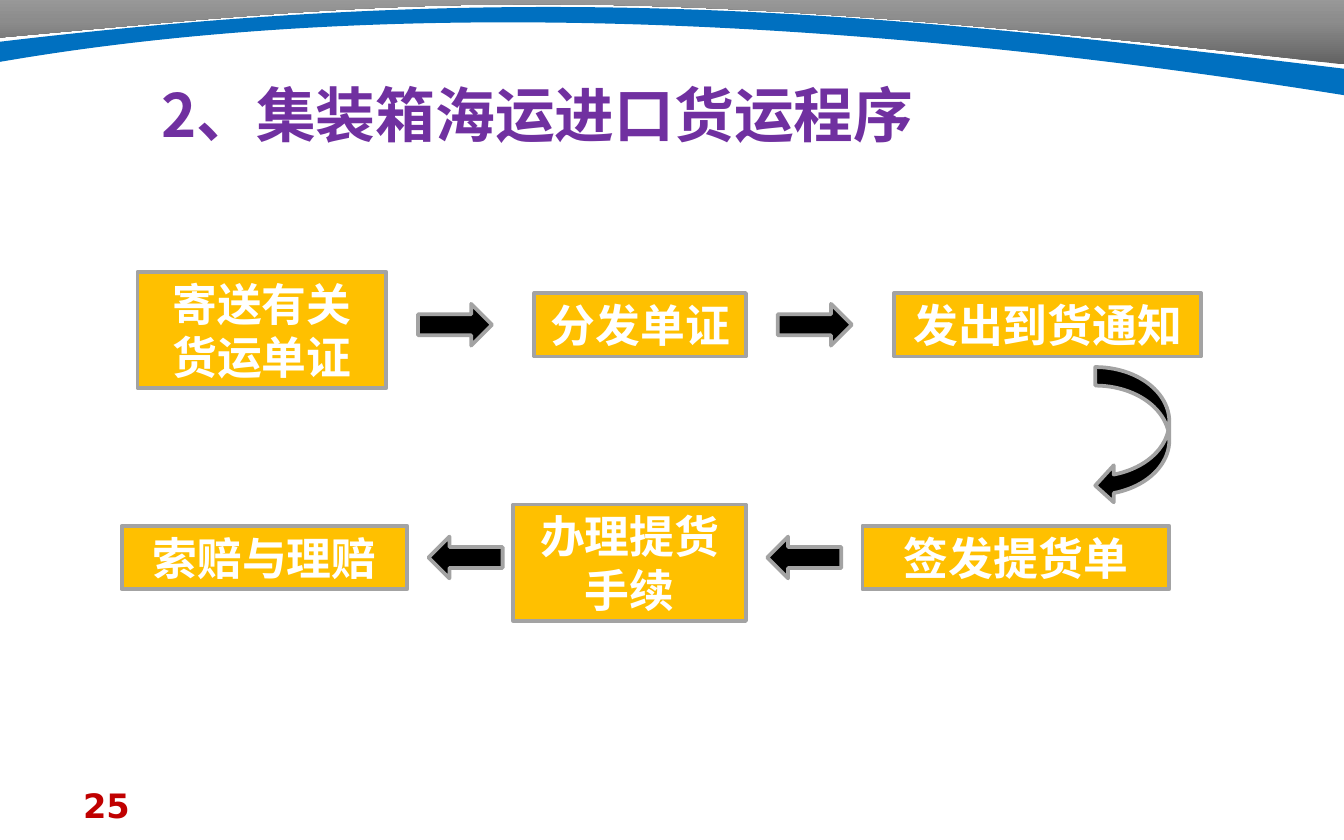
from copy import deepcopy

from pptx import Presentation
from pptx.dml.color import RGBColor
from pptx.enum.shapes import MSO_SHAPE
from pptx.enum.text import MSO_ANCHOR, PP_ALIGN
from pptx.oxml.ns import qn
from pptx.util import Cm, Pt

RECT = MSO_SHAPE.RECTANGLE
RIGHT = MSO_SHAPE.RIGHT_ARROW
LEFT = MSO_SHAPE.LEFT_ARROW
BEND = MSO_SHAPE.CURVED_LEFT_ARROW
MIDDLE = MSO_ANCHOR.MIDDLE
CENTER = PP_ALIGN.CENTER

HAN = "Noto Sans CJK SC"
LATIN = "DejaVu Sans"
COLORS = {
    "step": "FFC000", "edge": "A3A3A3", "arrow": "000000", "label": "FFFFFF",
    "title": "7030A0", "number": "C00000", "band": "0070C0",
    "dark": "626262", "mid": "8C8C8C", "light": "A6A6A6",
}
WIDTH, HEIGHT = 25.4, 15.88
ARROW_W, ARROW_H = 1.4, 0.79

# Middle of the row, arrow shape, steps (text, left, width, lines), arrow lefts
ROWS = [
    (6.14, RIGHT,
     [("寄送有关货运单证", 2.6, 4.7, 2), ("分发单证", 10.1, 4, 1),
      ("发出到货通知", 16.9, 5.8, 1)],
     [7.9, 14.7]),
    (10.54, LEFT,
     [("签发提货单", 16.3, 5.8, 1), ("办理提货手续", 9.7, 4.4, 2),
      ("索赔与理赔", 2.3, 5.4, 1)],
     [14.5, 8.1]),
]


def color(name):
    return RGBColor.from_string(COLORS[name])


def write(frame, text, size, name, face):
    frame.word_wrap = True
    frame.text = text
    font = frame.paragraphs[0].runs[0].font
    font.size, font.bold, font.name = Pt(size), True, face
    font.color.rgb = color(name)
    east = font._element.makeelement(qn("a:ea"), {"typeface": face})
    font._element.find(qn("a:latin")).addnext(east)


def add_text(slide, box, text, size, name, face):
    frame = slide.shapes.add_textbox(*map(Cm, box)).text_frame
    write(frame, text, size, name, face)


def add_block(slide, kind, box, fill):
    shape = slide.shapes.add_shape(kind, *map(Cm, box))
    shape.shadow.inherit = False
    shape.fill.solid()
    shape.fill.fore_color.rgb = color(fill)
    shape.line.color.rgb = color("edge")
    shape.line.width = Pt(2)
    return shape


def add_step(slide, text, left, mid, width, lines):
    """Add a step box; a two-line box hangs slightly below the row middle."""
    rise, height = (0.6, 1.2) if lines == 1 else (1, 2.2)
    shape = add_block(slide, RECT, (left, mid - rise, width, height), "step")
    frame = shape.text_frame
    write(frame, text, 24, "label", HAN)
    frame.vertical_anchor = MIDDLE
    frame.paragraphs[0].alignment = CENTER


def add_sweep(slide, points, starts):
    """Add a closed outline; each start begins three points of one curve."""
    first, *rest = [(Cm(x), Cm(y)) for x, y in points]
    pen = slide.shapes.build_freeform(*first)
    pen.add_line_segments(rest)
    shape = pen.convert_to_shape()
    shape.shadow.inherit = False
    shape.line.fill.background()
    lines = list(shape._element.iter(qn("a:lnTo")))
    for start in starts:
        bend, *others = lines[start:start + 3]
        curve = bend.makeelement(qn("a:cubicBezTo"), {})
        bend.addprevious(curve)
        for line in (bend, *others):
            curve.append(line[0])
            line.getparent().remove(line)
    return shape


def add_header(slide):
    sweep = add_sweep(slide, [
        (WIDTH, 1.22), (11.25, -0.43), (7.82, 0), (0, 0.71),
        (0, 0.48), (0, -0.05), (WIDTH, -0.05)], [0])
    fill = sweep.fill
    fill.gradient()
    fill.gradient_angle = 90
    first = fill.gradient_stops[0]._gs
    first.addnext(deepcopy(first))
    stops = zip(fill.gradient_stops, (0, 0.5, 1), ("dark", "mid", "light"))
    for stop, place, name in stops:
        stop.position = place
        stop.color.rgb = color(name)

    band = add_sweep(slide, [
        (0, 0.79), (10.24, -0.43), (16.56, 0.23), (WIDTH, 1.3),
        (WIDTH, 1.8), (15.37, 0.2), (6.78, 0), (0, 1.17)], [0, 4])
    band.fill.solid()
    band.fill.fore_color.rgb = color("band")


def main():
    deck = Presentation()
    deck.slide_width, deck.slide_height = Cm(WIDTH), Cm(HEIGHT)
    slide = deck.slides.add_slide(deck.slide_layouts[6])

    add_text(slide, (1.32, 14.71, 5.92, 0.84), "25", 18, "number", LATIN)
    add_header(slide)
    add_text(slide, (2.54, 1.35, 17.15, 1.63),
             " 2、集装箱海运进口货运程序", 32, "title", HAN)

    for mid, kind, steps, arrows in ROWS:
        for text, left, width, lines in steps:
            add_step(slide, text, left, mid, width, lines)
        for left in arrows:
            box = (left, mid - ARROW_H / 2, ARROW_W, ARROW_H)
            add_block(slide, kind, box, "arrow")
    add_block(slide, BEND, (20.7, 6.94, ARROW_W, 2.59), "arrow")

    deck.save("out.pptx")


if __name__ == "__main__":
    main()
